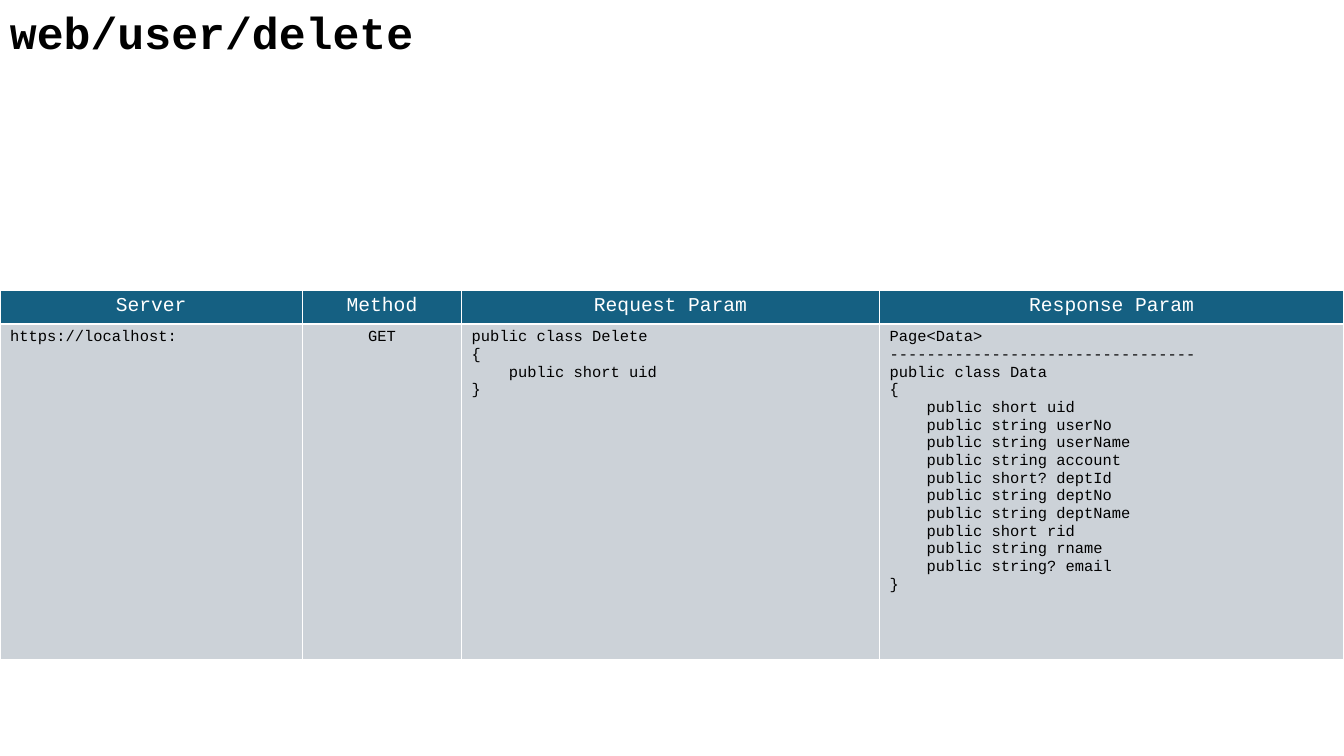
from dataclasses import dataclass

from lxml.etree import SubElement
from pptx import Presentation
from pptx.dml.color import RGBColor
from pptx.enum.text import MSO_AUTO_SIZE, PP_ALIGN as Align
from pptx.oxml.ns import qn
from pptx.table import _Cell as Cell
from pptx.text.text import TextFrame as Frame
from pptx.util import Inches, Pt

WIDE, HIGH = Inches(13.33), Inches(7.5)
FONT = "Courier New"
BLACK, WHITE, TEAL, GRAY = "000000", "FFFFFF", "156082", "CCD2D8"
TOP = 0.384  # table top, share of slide height
ROWS = (0.044, 0.444)  # row heights, shares of slide height


@dataclass
class Column:
    head: str
    share: float  # of slide width
    body: str
    align: Align = Align.LEFT


REQUEST = """public class Delete
{
    public short uid
}"""

RESPONSE = """Page<Data>
---------------------------------
public class Data
{
    public short uid
    public string userNo
    public string userName
    public string account
    public short? deptId
    public string deptNo
    public string deptName
    public short rid
    public string rname
    public string? email
}"""

COLUMNS = [
    Column("Server", 0.225, "https://localhost:"),
    Column("Method", 0.1185, "GET", Align.CENTER),
    Column("Request Param", 0.311, REQUEST),
    Column("Response Param", 0.3455, RESPONSE),
]


def color(code: str) -> RGBColor:
    return RGBColor.from_string(code)


def write(frame: Frame, text: str, *, size: float, ink: str = BLACK,
          bold: bool = False, align: Align = Align.LEFT) -> None:
    """Put each line of text in its own paragraph."""
    for i, line in enumerate(text.split("\n")):
        para = frame.add_paragraph() if i else frame.paragraphs[0]
        para.alignment = align
        run = para.add_run()
        run.text = line
        font = run.font
        font.name, font.size, font.bold = FONT, Pt(size), bold
        font.color.rgb = color(ink)


def paint(cell: Cell, fill: str) -> None:
    """Give a cell thin white borders and a solid fill."""
    props = cell._tc.get_or_add_tcPr()
    for side in "LRTB":
        line = SubElement(props, qn(f"a:ln{side}"), w=str(Pt(1)))
        solid = SubElement(line, qn("a:solidFill"))
        SubElement(solid, qn("a:srgbClr"), val=WHITE)
    cell.fill.solid()
    cell.fill.fore_color.rgb = color(fill)


def main() -> None:
    deck = Presentation()
    deck.slide_width, deck.slide_height = WIDE, HIGH
    slide = deck.slides.add_slide(deck.slide_layouts[6])

    title = slide.shapes.add_textbox(0, 0, int(WIDE * 0.709), int(HIGH * 0.085))
    title.text_frame.word_wrap = True
    title.text_frame.auto_size = MSO_AUTO_SIZE.SHAPE_TO_FIT_TEXT
    write(title.text_frame, "web/user/delete", size=32, bold=True)

    table = slide.shapes.add_table(
        len(ROWS), len(COLUMNS), 0, int(HIGH * TOP), WIDE, int(HIGH * sum(ROWS))
    ).table
    for row, share in zip(table.rows, ROWS):
        row.height = int(HIGH * share)
    for i, col in enumerate(COLUMNS):
        table.columns[i].width = int(WIDE * col.share)
        head, body = table.cell(0, i), table.cell(1, i)
        paint(head, TEAL)
        write(head.text_frame, col.head, size=14, ink=WHITE, align=Align.CENTER)
        paint(body, GRAY)
        write(body.text_frame, col.body, size=11, align=col.align)

    deck.save("out.pptx")


if __name__ == "__main__":
    main()
